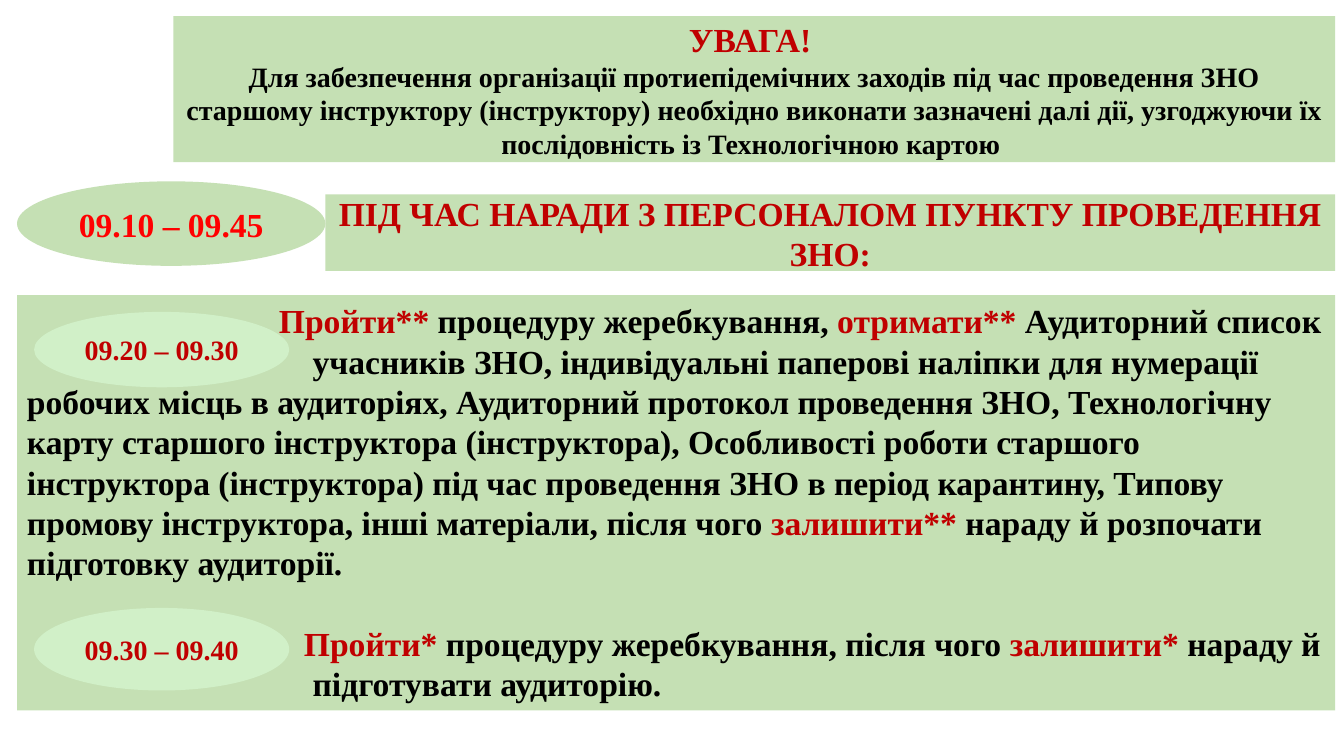
import pptx
import pptx.util
import pptx.dml.color
import pptx.enum.shapes
import pptx.enum.text

Cm = pptx.util.Cm
RGBColor = pptx.dml.color.RGBColor
Shapes = pptx.enum.shapes.MSO_SHAPE
Anchor = pptx.enum.text.MSO_ANCHOR
Align = pptx.enum.text.PP_ALIGN

GREEN = RGBColor(0xC5, 0xE0, 0xB4)
PALE_GREEN = RGBColor(0xD1, 0xF0, 0xC8)
DARK_RED = RGBColor(0xC0, 0x00, 0x00)
RED = RGBColor(0xFF, 0x00, 0x00)
BLACK = RGBColor(0x00, 0x00, 0x00)
FONT = "Times New Roman"

LEFT, RIGHT = 0.43, 33.65


def add_panel(slide, kind, box, fill, anchor=Anchor.MIDDLE):
    shape = slide.shapes.add_shape(kind, *(Cm(length) for length in box))
    shape.shadow.inherit = False
    shape.fill.solid()
    shape.fill.fore_color.rgb = fill
    shape.line.fill.background()
    shape.text_frame.word_wrap = True
    shape.text_frame.vertical_anchor = anchor
    return shape.text_frame


def add_paragraph(frame, runs, size, align=Align.CENTER, indent=0, space_before=0):
    first = frame.paragraphs[0]
    paragraph = frame.add_paragraph() if first.runs else first
    paragraph.alignment = align
    if indent:
        paragraph._p.get_or_add_pPr().set("indent", str(int(Cm(indent))))
    if space_before:
        paragraph.space_before = pptx.util.Pt(space_before)
    for text, color in runs:
        run = paragraph.add_run()
        run.text = text
        run.font.name = FONT
        run.font.size = pptx.util.Pt(size)
        run.font.bold = True
        run.font.color.rgb = color


def add_time(slide, box, time, size, color, fill):
    frame = add_panel(slide, Shapes.OVAL, box, fill)
    add_paragraph(frame, [(time, color)], size)


def add_warning(slide, box):
    frame = add_panel(slide, Shapes.RECTANGLE, box, GREEN)
    add_paragraph(frame, [("УВАГА! ", DARK_RED)], 24)
    add_paragraph(frame, [(
        "Для забезпечення організації протиепідемічних заходів під час проведення ЗНО "
        "старшому інструктору (інструктору) необхідно виконати зазначені далі дії, "
        "узгоджуючи їх послідовність із Технологічною картою ", BLACK)], 20)


def add_meeting_heading(slide, box):
    left, top, width, height = box
    oval_width = 7.77
    frame = add_panel(slide, Shapes.RECTANGLE,
                      (left + oval_width, top + 0.33, width - oval_width, 1.93), GREEN)
    add_paragraph(frame, [("ПІД ЧАС НАРАДИ З ПЕРСОНАЛОМ ПУНКТУ ПРОВЕДЕННЯ ЗНО:", DARK_RED)], 24)
    add_time(slide, (left, top, oval_width, height), "09.10 – 09.45", 24, RED, GREEN)


def add_steps(slide, box):
    left, top, width, height = box
    frame = add_panel(slide, Shapes.RECTANGLE, box, GREEN, Anchor.TOP)
    steps = [
        (6.35, 0, [("Пройти**", DARK_RED), (" процедуру жеребкування, ", BLACK),
                   ("отримати** ", DARK_RED), ("Аудиторний список", BLACK)]),
        (7.2, 0, [("учасників ЗНО, індивідуальні паперові наліпки для нумерації робочих місць "
                   "в аудиторіях, Аудиторний протокол проведення ЗНО, Технологічну карту "
                   "старшого інструктора (інструктора), Особливості роботи старшого "
                   "інструктора (інструктора) під час проведення ЗНО в період карантину, "
                   "Типову промову інструктора, інші матеріали, після чого ", BLACK),
                  ("залишити** ", DARK_RED),
                  ("нараду й розпочати підготовку аудиторії.", BLACK)]),
        (6.98, 28.8, [("Пройти*", DARK_RED), (" процедуру жеребкування, після чого ", BLACK),
                      ("залишити*", DARK_RED), (" нараду й", BLACK)]),
        (7.2, 0, [("підготувати аудиторію.", BLACK)]),
    ]
    for indent, space_before, runs in steps:
        add_paragraph(frame, runs, 24, Align.LEFT, indent, space_before)
    for offset, oval_height, time in [(0.42, 1.9, "09.20 – 09.30"), (7.88, 2.08, "09.30 – 09.40")]:
        add_time(slide, (left + 0.43, top + offset, 6.43, oval_height),
                 time, 20, DARK_RED, PALE_GREEN)


def main():
    presentation = pptx.Presentation()
    presentation.slide_width = Cm(33.87)
    presentation.slide_height = Cm(19.05)
    slide = presentation.slides.add_slide(presentation.slide_layouts[6])
    add_warning(slide, (4.37, 0.41, RIGHT - 4.37, 3.68))
    add_meeting_heading(slide, (LEFT, 4.57, RIGHT - LEFT, 2.13))
    add_steps(slide, (LEFT, 7.44, RIGHT - LEFT, 10.46))
    presentation.save("out.pptx")


if __name__ == "__main__":
    main()
